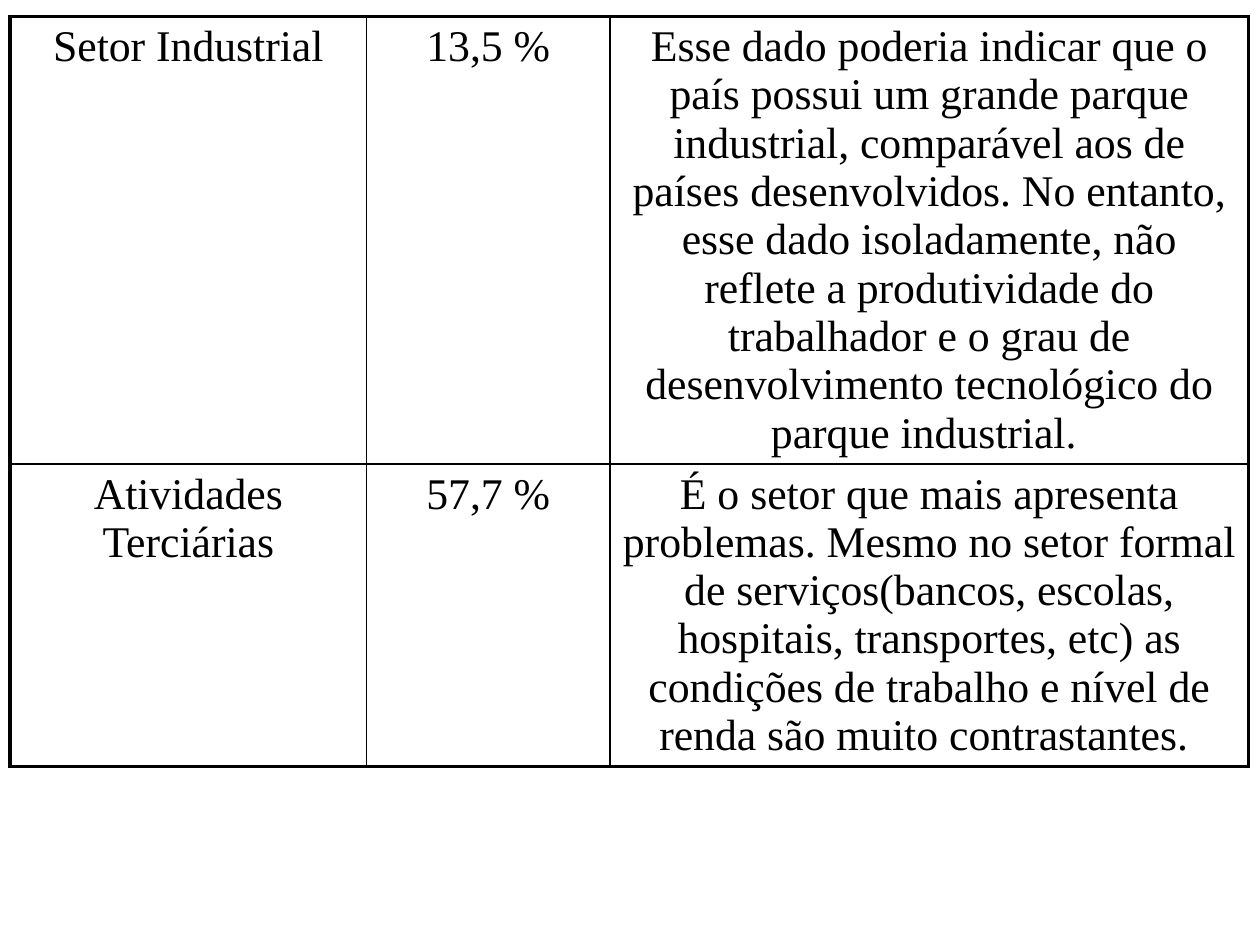
from typing import NamedTuple

import pptx
import pptx.dml.color
import pptx.enum.text
import pptx.oxml
import pptx.oxml.ns
import pptx.util
from pptx.util import Inches

COLORS = {"ink": "000000"}
FONT = "Times New Roman"
OUTER_PT, INNER_PT = 2.25, 1
COLUMN_WIDTHS = (2.83, 1.93, 5.07)


class Sector(NamedTuple):
    name: str
    share: str
    comment: str
    height: float


SECTORS = (
    Sector(
        "Setor Industrial",
        "13,5 %",
        "Esse dado poderia indicar que o país possui um grande parque industrial, "
        "comparável aos de países desenvolvidos. No entanto, esse dado isoladamente, "
        "não reflete a produtividade do trabalhador e o grau de desenvolvimento "
        "tecnológico do parque industrial. ",
        3.55,
    ),
    Sector(
        "Atividades Terciárias",
        "57,7 %",
        "É o setor que mais apresenta problemas. Mesmo no setor formal de "
        "serviços(bancos, escolas, hospitais, transportes, etc) as condições de "
        "trabalho e nível de renda são muito contrastantes. ",
        2.4,
    ),
)


def set_borders(cell, outer_sides: dict[str, bool]) -> None:
    """Draw all four borders, thick on the sides that lie on the table's edge."""
    tc_pr = cell._tc.get_or_add_tcPr()
    for i, (side, is_outer) in enumerate(outer_sides.items()):
        width = pptx.util.Pt(OUTER_PT if is_outer else INNER_PT)
        line = pptx.oxml.parse_xml(
            f'<a:ln{side} {pptx.oxml.ns.nsdecls("a")} w="{width}"><a:solidFill>'
            f'<a:srgbClr val="{COLORS["ink"]}"/></a:solidFill></a:ln{side}>'
        )
        tc_pr.insert(i, line)


def fill_cell(cell, text: str) -> None:
    cell.fill.background()
    cell.text = text
    p = cell.text_frame.paragraphs[0]
    p.alignment = pptx.enum.text.PP_ALIGN.CENTER
    p.font.name = FONT
    p.font.size = pptx.util.Pt(25)
    p.font.color.rgb = pptx.dml.color.RGBColor.from_string(COLORS["ink"])


def add_sector_table(slide, sectors: tuple[Sector, ...]) -> None:
    n_rows, n_cols = len(sectors), len(COLUMN_WIDTHS)
    table = slide.shapes.add_table(
        n_rows, n_cols, Inches(0.08), Inches(0.13),
        Inches(sum(COLUMN_WIDTHS)), Inches(sum(s.height for s in sectors)),
    ).table
    table.first_row = table.horz_banding = False
    for column, width in zip(table.columns, COLUMN_WIDTHS):
        column.width = Inches(width)
    for i, sector in enumerate(sectors):
        table.rows[i].height = Inches(sector.height)
        for j, text in enumerate((sector.name, sector.share, sector.comment)):
            cell = table.cell(i, j)
            fill_cell(cell, text)
            set_borders(cell, {"L": j == 0, "R": j == n_cols - 1,
                               "T": i == 0, "B": i == n_rows - 1})


def main() -> None:
    prs = pptx.Presentation()
    prs.slide_width, prs.slide_height = Inches(10), Inches(7.5)
    slide = prs.slides.add_slide(prs.slide_layouts[6])
    add_sector_table(slide, SECTORS)
    prs.save("out.pptx")


if __name__ == "__main__":
    main()
